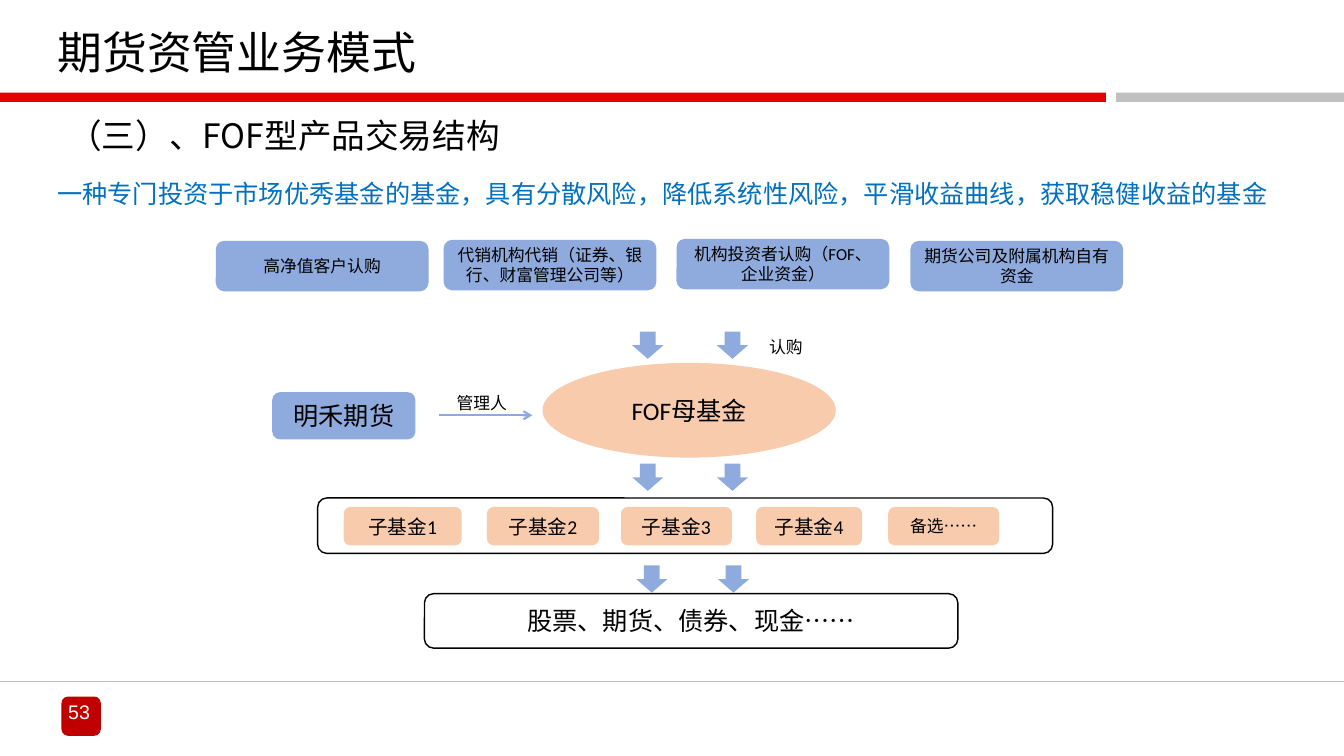
import pptx
import pptx.util
import pptx.dml.color
import pptx.enum.shapes
import pptx.enum.text
import pptx.oxml.ns
from dataclasses import dataclass
from lxml import etree

EMU_PER_PX = 9144  # 100 px to the inch
SHAPES = pptx.enum.shapes.MSO_SHAPE
ALIGN = pptx.enum.text.PP_ALIGN
ANCHOR = pptx.enum.text.MSO_ANCHOR
AUTO_SIZE = pptx.enum.text.MSO_AUTO_SIZE


@dataclass(frozen=True)
class Theme:
    black: str = "000000"
    white: str = "FFFFFF"
    red: str = "E20000"
    dark_red: str = "C00000"
    gray: str = "C0C0C0"
    blue: str = "8FAADC"
    peach: str = "F8CBAD"
    link_blue: str = "0070C0"
    latin: str = "Calibri"
    chinese: str = "Noto Sans CJK SC"
    digits: str = "Arial"
    title: int = 32
    heading: int = 24
    large: int = 18
    medium: int = 14
    small: int = 12


def px(*lengths):
    return [pptx.util.Emu(length * EMU_PER_PX) for length in lengths]


def rgb(color):
    return pptx.dml.color.RGBColor.from_string(color)


def add_child(parent, tag, **attributes):
    return etree.SubElement(parent, pptx.oxml.ns.qn(tag), attributes)


class SlideBuilder:
    def __init__(self, slide, theme):
        self.slide = slide
        self.theme = theme

    def set_text(self, frame, text, size, color=None, font=None,
                 align=ALIGN.LEFT, anchor=ANCHOR.TOP, wrap=True, spacing=None):
        frame.word_wrap = wrap
        frame.vertical_anchor = anchor
        paragraph = frame.paragraphs[0]
        paragraph.alignment = align
        if spacing:
            paragraph.line_spacing = spacing
        run = paragraph.add_run()
        run.text = text
        run.font.size = pptx.util.Pt(size)
        run.font.name = font or self.theme.latin
        run.font.color.rgb = rgb(color or self.theme.black)
        add_child(run.font._element, "a:ea", typeface=self.theme.chinese)

    def title(self, box, text):
        shape = self.slide.shapes.title
        shape.left, shape.top, shape.width, shape.height = px(*box)
        shape.text_frame.auto_size = AUTO_SIZE.NONE
        self.set_text(shape.text_frame, text, self.theme.title,
                      font=self.theme.chinese, anchor=ANCHOR.BOTTOM, spacing=0.9)

    def label(self, box, text, size, **text_format):
        frame = self.slide.shapes.add_textbox(*px(*box)).text_frame
        self.set_text(frame, text, size, **text_format)

    def shape(self, kind, box, fill=None, outline=None, text=None, size=None):
        shape = self.slide.shapes.add_shape(kind, *px(*box))
        shape.shadow.inherit = False
        if fill:
            shape.fill.solid()
            shape.fill.fore_color.rgb = rgb(fill)
        else:
            shape.fill.background()
        if outline:
            shape.line.color.rgb = rgb(outline)
            shape.line.width = pptx.util.Pt(1)
        else:
            shape.line.fill.background()
        if text:
            self.set_text(shape.text_frame, text, size,
                          align=ALIGN.CENTER, anchor=ANCHOR.MIDDLE)

    def line(self, start, end, color, width, arrow=False):
        connector = self.slide.shapes.add_connector(
            pptx.enum.shapes.MSO_CONNECTOR.STRAIGHT, *px(*start, *end))
        connector.line.color.rgb = rgb(color)
        connector.line.width = pptx.util.Pt(width)
        if arrow:
            add_child(connector.line._get_or_add_ln(), "a:tailEnd", type="arrow")
        add_child(connector._element.spPr, "a:effectLst")

    def down_arrows(self, top, lefts):
        for left in lefts:
            self.shape(SHAPES.DOWN_ARROW, (left, top, 31, 27), self.theme.blue)


def add_page_frame(builder):
    theme = builder.theme
    builder.shape(SHAPES.ROUNDED_RECTANGLE, (61, 691, 39, 39), theme.dark_red)
    builder.shape(SHAPES.RECTANGLE, (0, 92, 1097, 9), theme.red)
    builder.shape(SHAPES.RECTANGLE, (1107, 92, 226, 9), theme.gray)
    builder.line((0, 676), (1333, 676), theme.gray, 1)
    builder.label((31, 689, 95, 37), "53", theme.medium, color=theme.white,
                  font=theme.digits, align=ALIGN.CENTER)


def add_headings(builder):
    theme = builder.theme
    builder.title((47, 12, 1100, 72), "期货资管业务模式")
    builder.label((58, 109, 654, 50), "（三）、FOF型产品交易结构",
                  theme.heading, font=theme.chinese)
    builder.label(
        (47, 172, 1239, 40),
        "一种专门投资于市场优秀基金的基金，具有分散风险，降低系统性风险，"
        "平滑收益曲线，获取稳健收益的基金",
        theme.large, color=theme.link_blue)


def add_structure(builder):
    theme = builder.theme
    rounded = SHAPES.ROUNDED_RECTANGLE

    investors = [
        (214, 239, "高净值客户认购"),
        (440, 238, "代销机构代销（证券、银行、财富管理公司等）"),
        (671, 237, "机构投资者认购（FOF、企业资金）"),
        (903, 239, "期货公司及附属机构自有资金"),
    ]
    for left, top, text in investors:
        builder.shape(rounded, (left, top, 211, 50), theme.blue,
                      text=text, size=theme.small)

    builder.down_arrows(329, (627, 711))
    builder.label((753, 329, 71, 30), "认购", theme.small)

    builder.shape(SHAPES.OVAL, (538, 360, 291, 94), theme.peach,
                  text="FOF母基金", size=theme.large)
    builder.shape(rounded, (270, 389, 142, 47), theme.blue,
                  text="明禾期货", size=theme.large)
    builder.line((435, 412), (528, 412), theme.blue, 1.5, arrow=True)
    builder.label((443, 385, 71, 30), "管理人", theme.small, wrap=False)

    builder.down_arrows(460, (627, 711))
    builder.shape(rounded, (315, 494, 729, 55), outline=theme.black)
    funds = [
        (341, 117, "子基金1", theme.medium),
        (483, 111, "子基金2", theme.medium),
        (616, 110, "子基金3", theme.medium),
        (750, 105, "子基金4", theme.medium),
        (881, 110, "备选……", theme.small),
    ]
    for left, width, text, size in funds:
        builder.shape(rounded, (left, 503, width, 38), theme.peach,
                      text=text, size=size)

    builder.down_arrows(561, (631, 712))
    builder.shape(rounded, (421, 589, 529, 54), outline=theme.black,
                  text="股票、期货、债券、现金……", size=theme.large)


def main():
    presentation = pptx.Presentation()
    presentation.slide_width, presentation.slide_height = px(1333, 750)
    title_only = presentation.slide_layouts[5]
    builder = SlideBuilder(presentation.slides.add_slide(title_only), Theme())
    add_page_frame(builder)
    add_headings(builder)
    add_structure(builder)
    presentation.save("out.pptx")


if __name__ == "__main__":
    main()
